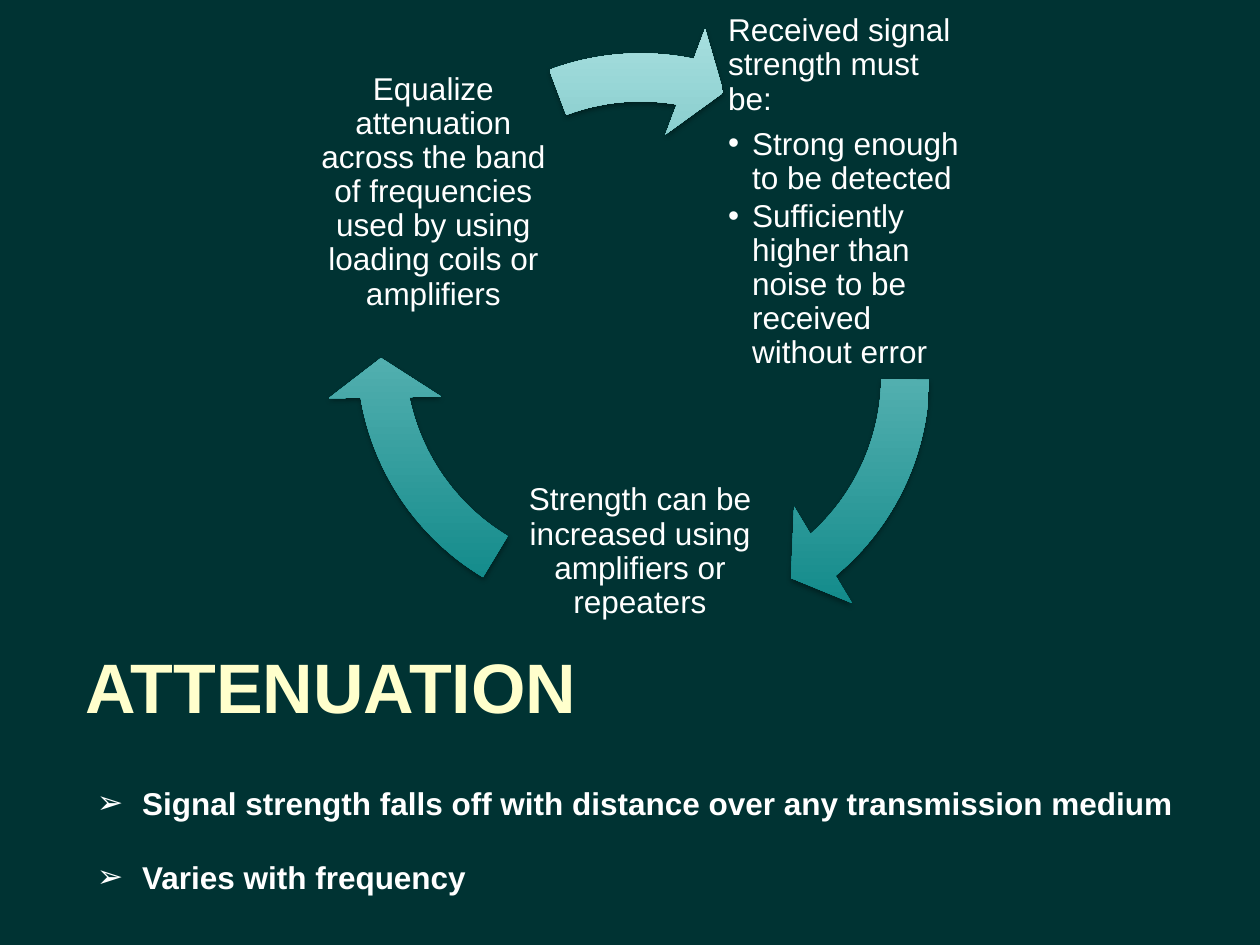
from lxml import etree
from pptx import Presentation
from pptx.dml.color import RGBColor
from pptx.enum.shapes import MSO_SHAPE
from pptx.enum.text import MSO_ANCHOR, MSO_AUTO_SIZE, PP_ALIGN
from pptx.oxml import parse_xml
from pptx.oxml.ns import nsdecls, qn
from pptx.util import Inches, Pt

ARROW = MSO_SHAPE.CIRCULAR_ARROW
TOP, MIDDLE = MSO_ANCHOR.TOP, MSO_ANCHOR.MIDDLE
LEFT, CENTER = PP_ALIGN.LEFT, PP_ALIGN.CENTER
FIXED = MSO_AUTO_SIZE.NONE
COLORS = {"back": "003333", "title": "FFFFCC", "text": "FFFFFF",
          "deep": "008080", "pale": "A9E0E0", "shade": "000000"}


def color(name):
    return RGBColor.from_string(COLORS[name])


def add_run(para, text, size=18, name="text", bold=False):
    run = para.add_run()
    run.text = text
    run.font.name = "Arial"
    run.font.size = Pt(size)
    run.font.bold = bold
    run.font.color.rgb = color(name)


def add_bullet(para, char, indent):
    props = para._p.get_or_add_pPr()
    props.set("marL", str(Inches(indent)))
    props.set("indent", str(-Inches(indent)))
    etree.SubElement(props, qn("a:buFont")).set("typeface", "Arial")
    etree.SubElement(props, qn("a:buChar")).set("char", char)


def add_title(slide, text):
    title = slide.shapes.title
    title.left, title.top = Inches(0.58), Inches(5)
    title.width, title.height = Inches(8.5), Inches(1.01)
    frame = title.text_frame
    frame.auto_size = FIXED
    frame.vertical_anchor = TOP
    frame.margin_top = Inches(0.11)
    para = frame.paragraphs[0]
    para.alignment = LEFT
    add_run(para, text, 40, "title", True)


def add_step(group, left, top, text, points=()):
    side = Inches(1.96)
    frame = group.shapes.add_textbox(Inches(left), Inches(top), side, side).text_frame
    frame.word_wrap = True
    frame.vertical_anchor = MIDDLE
    frame.margin_left = frame.margin_right = Inches(0.03)
    frame.margin_top = frame.margin_bottom = Inches(0.03)
    para = frame.paragraphs[0]
    para.alignment = LEFT if points else CENTER
    para.line_spacing = 0.9
    para.space_after = Pt(6.3)
    add_run(para, text)
    for point in points:
        para = frame.add_paragraph()
        para.line_spacing = 0.9
        para.space_after = Pt(2.7)
        add_bullet(para, "•", 0.19)
        add_run(para, point)


def add_arrow(group, left, top, end, start):
    side = Inches(4.63)
    arrow = group.shapes.add_shape(ARROW, Inches(left), Inches(top), side, side)
    for i, value in enumerate((0.082, 5.761, end, start, 0.096)):
        arrow.adjustments[i] = value
    arrow.line.fill.background()
    arrow.fill.gradient()
    arrow.fill.gradient_angle = 90
    for stop, name, place in zip(arrow.fill.gradient_stops, ("deep", "pale"), (0, 1)):
        stop.color.rgb = color(name)
        stop.position = place
    arrow._element.spPr.append(parse_xml(
        f'<a:effectLst {nsdecls("a")}><a:outerShdw blurRad="{Pt(3.1)}" '
        f'dist="{Pt(1.8)}" dir="5400000" rotWithShape="0">'
        f'<a:srgbClr val="{COLORS["shade"]}"><a:alpha val="35000"/></a:srgbClr>'
        '</a:outerShdw></a:effectLst>'))


def add_cycle(slide):
    group = slide.shapes.add_group_shape()
    add_step(group, 5.75, 0.55, "Received signal strength must be:",
             ("Strong enough to be detected",
              "Sufficiently higher than noise to be received without error"))
    add_arrow(group, 3, 0.67, 29.638, 0.518)
    add_step(group, 4.1, 3.4, "Strength can be increased using amplifiers or repeaters")
    add_arrow(group, 2.58, 0.5, 101.721, 72.601)
    add_step(group, 2.46, 0.55, "Equalize attenuation across the band of frequencies "
             "used by using loading coils or amplifiers")
    add_arrow(group, 2.77, 0.17, 168.567, 149.672)


def add_notes(slide, lines):
    box = slide.shapes.add_textbox(Inches(0.67), Inches(6.17), Inches(9), Inches(1.01))
    frame = box.text_frame
    frame.word_wrap = True
    for i, line in enumerate(lines):
        para = frame.add_paragraph() if i else frame.paragraphs[0]
        para.space_before = Pt(20.7 if i else 0)
        add_bullet(para, "➢", 0.36)
        add_run(para, line, bold=True)


def main():
    deck = Presentation()
    deck.slide_width, deck.slide_height = Inches(10), Inches(7.5)
    slide = deck.slides.add_slide(deck.slide_layouts[5])
    slide.background.fill.solid()
    slide.background.fill.fore_color.rgb = color("back")
    add_title(slide, "ATTENUATION")
    add_cycle(slide)
    add_notes(slide, ("Signal strength falls off with distance over any transmission medium",
                      "Varies with frequency"))
    deck.save("out.pptx")


if __name__ == "__main__":
    main()
